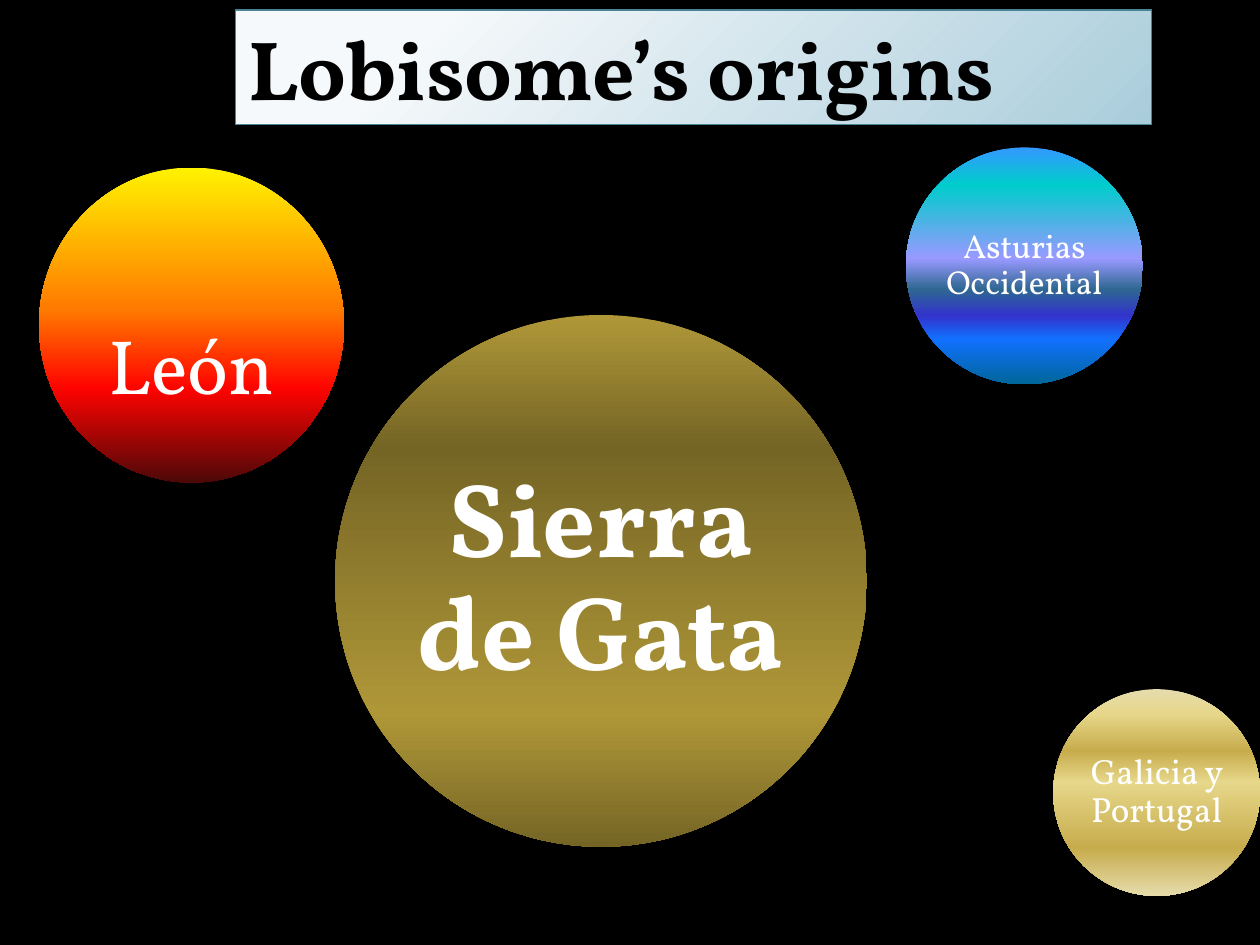
import pptx
import pptx.util
import pptx.oxml
import pptx.oxml.ns
from pptx.dml.color import RGBColor
from pptx.enum.shapes import MSO_SHAPE
from pptx.enum.text import MSO_ANCHOR, MSO_AUTO_SIZE, PP_ALIGN

FONT = "Vollkorn"
BLACK = RGBColor(0x00, 0x00, 0x00)
WHITE = RGBColor(0xFF, 0xFF, 0xFF)
TEAL = RGBColor(0x4A, 0x82, 0x96)
PALE = RGBColor(0xF6, 0xF9, 0xFB)
MIST = RGBColor(0xAA, 0xCD, 0xDB)
YELLOW = RGBColor(0xFF, 0xF2, 0x00)
ORANGE = RGBColor(0xFF, 0x7A, 0x00)
RED = RGBColor(0xFF, 0x03, 0x00)
MAROON = RGBColor(0x4D, 0x08, 0x08)
CREAM = RGBColor(0xE6, 0xDC, 0xAC)
STRAW = RGBColor(0xE6, 0xD7, 0x8A)
GOLD = RGBColor(0xC7, 0xAC, 0x4C)
SKY = RGBColor(0x33, 0x99, 0xFF)
CYAN = RGBColor(0x00, 0xCC, 0xCC)
LILAC = RGBColor(0x99, 0x99, 0xFF)
SLATE = RGBColor(0x2E, 0x67, 0x92)
INDIGO = RGBColor(0x33, 0x33, 0xCC)
AZURE = RGBColor(0x11, 0x70, 0xFF)
OCEAN = RGBColor(0x00, 0x66, 0x99)
BRASS = RGBColor(0xAF, 0x97, 0x38)
BRONZE = RGBColor(0x75, 0x65, 0x25)

DOWN = '<a:lin ang="5400000" scaled="0"/>'
CORNER = ('<a:path path="circle"><a:fillToRect l="-15000" t="-15000" '
          'r="115000" b="115000"/></a:path>')


def shade(shape, stops, course):
    """Fill a shape with a gradient of (percent, colour) stops."""
    shape.fill.solid()
    marks = "".join(
        f'<a:gs pos="{pos * 1000}"><a:srgbClr val="{tint}"/></a:gs>'
        for pos, tint in stops)
    grad = pptx.oxml.parse_xml(
        f'<a:gradFill {pptx.oxml.ns.nsdecls("a")} rotWithShape="1">'
        f'<a:gsLst>{marks}</a:gsLst>{course}</a:gradFill>')
    props = shape.element.spPr
    props.replace(props.find(pptx.oxml.ns.qn("a:solidFill")), grad)


def write(para, text, size, color, bold):
    run = para.add_run()
    run.text = text
    run.font.name = FONT
    run.font.size = pptx.util.Pt(size)
    run.font.bold = bold
    run.font.color.rgb = color


deck = pptx.Presentation()
deck.slide_width = pptx.util.Inches(10)
deck.slide_height = pptx.util.Inches(7.5)
unit = deck.slide_width / 100  # all places are percent of the slide width

slide = deck.slides.add_slide(deck.slide_layouts[5])
slide.background.fill.solid()
slide.background.fill.fore_color.rgb = BLACK

title = slide.shapes.title
title.left, title.top, title.width, title.height = (
    int(n * unit) for n in (18.7, 0.8, 72.7, 9.1))
shade(title, [(20, PALE), (100, MIST)], CORNER)
title.line.color.rgb = TEAL
title.line.width = pptx.util.Pt(0.75)
frame = title.text_frame
frame.auto_size = MSO_AUTO_SIZE.NONE
frame.vertical_anchor = MSO_ANCHOR.MIDDLE
frame.paragraphs[0].alignment = PP_ALIGN.LEFT
write(frame.paragraphs[0], "Lobisome’s origins", 48, BLACK, True)

# text, size, bold, anchor, foot margin, left, top, width, height, stops
balls = [
    ("León", 44, False, MSO_ANCHOR.BOTTOM, 2, 3.1, 13.3, 24.2, 25,
     [(0, YELLOW), (45, ORANGE), (70, RED), (100, MAROON)]),
    ("Galicia y Portugal", 20, False, MSO_ANCHOR.MIDDLE, 0.3,
     83.6, 54.7, 16.4, 16.4,
     [(0, CREAM), (12, STRAW), (30, GOLD), (45, STRAW), (77, GOLD),
      (100, CREAM)]),
    ("Asturias Occidental", 19, False, MSO_ANCHOR.MIDDLE, 0.3,
     71.9, 11.7, 18.8, 18.8,
     [(0, SKY), (16, CYAN), (47, LILAC), (60, SLATE), (71, INDIGO),
      (81, AZURE), (100, OCEAN)]),
    ("Sierra de Gata", 60, True, MSO_ANCHOR.MIDDLE, 0.4,
     26.6, 25, 42.2, 42.2,
     [(0, BRASS), (25, BRONZE), (75, BRASS), (100, BRONZE)]),
]
inner = 0.5 ** 0.5  # side of the box that fits inside a circle
edge = (1 - inner) / 2

for text, size, bold, anchor, foot, x, y, w, h, stops in balls:
    group = slide.shapes.add_group_shape()
    ball = group.shapes.add_shape(
        MSO_SHAPE.OVAL, *(int(n * unit) for n in (x, y, w, h)))
    ball.shadow.inherit = False
    ball.line.fill.background()
    shade(ball, stops, DOWN)

    label = group.shapes.add_textbox(
        *(int(n * unit) for n in
          (x + w * edge, y + h * edge, w * inner, h * inner)))
    frame = label.text_frame
    frame.word_wrap = True
    frame.vertical_anchor = anchor
    frame.margin_left = frame.margin_right = int(0.2 * unit)
    frame.margin_top = int(0.3 * unit)
    frame.margin_bottom = int(foot * unit)
    para = frame.paragraphs[0]
    para.alignment = PP_ALIGN.CENTER
    para.line_spacing = 0.9
    write(para, text, size, WHITE, bold)

deck.save("out.pptx")
